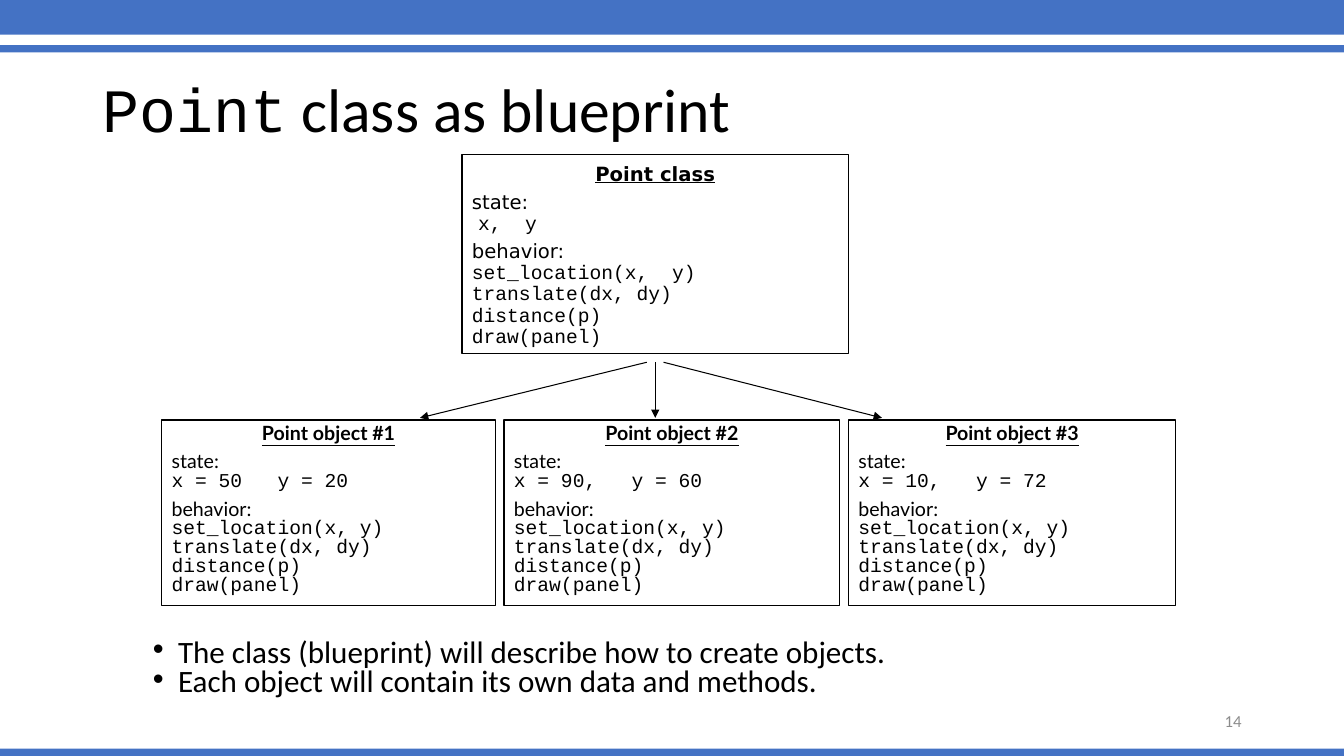
from lxml import etree
from pptx import Presentation
from pptx.dml.color import RGBColor
from pptx.enum.shapes import MSO_CONNECTOR, MSO_SHAPE
from pptx.enum.text import MSO_ANCHOR, MSO_AUTO_SIZE, PP_ALIGN
from pptx.oxml.ns import qn
from pptx.util import Pt

PX = 9525  # EMU per px, 96 px to the inch
BLACK = RGBColor(0x00, 0x00, 0x00)
WHITE = RGBColor(0xFF, 0xFF, 0xFF)
BLUE = RGBColor(0x44, 0x72, 0xC4)
GRAY = RGBColor(0x8C, 0x8C, 0x8C)
BODY_FONT, CODE_FONT = "Calibri", "Courier New"
RECTANGLE = MSO_SHAPE.RECTANGLE
STRAIGHT = MSO_CONNECTOR.STRAIGHT
LEFT, CENTER, RIGHT = PP_ALIGN.LEFT, PP_ALIGN.CENTER, PP_ALIGN.RIGHT
TOP, MIDDLE = MSO_ANCHOR.TOP, MSO_ANCHOR.MIDDLE
NO_AUTOFIT = MSO_AUTO_SIZE.NONE


def add_text(paragraph, text, size, name, color=BLACK, **styles):
    """Add text in one format, with a line break at each newline."""
    for index, line in enumerate(text.split("\n")):
        if index:
            paragraph.add_line_break()
        if line:
            run = paragraph.add_run()
            run.text = line
            run.font.color.rgb = color
            formats = {"size": Pt(size), "name": name, **styles}
            for attribute, value in formats.items():
                setattr(run.font, attribute, value)


def set_frame(shape, left, top, width, height, anchor):
    """Place a shape and return its wrapped, fixed-size text frame."""
    places = {"left": left, "top": top, "width": width, "height": height}
    for attribute, value in places.items():
        setattr(shape, attribute, value * PX)
    frame = shape.text_frame
    formats = {"word_wrap": True, "auto_size": NO_AUTOFIT, "vertical_anchor": anchor}
    for attribute, value in formats.items():
        setattr(frame, attribute, value)
    return frame


presentation = Presentation()
presentation.slide_width = 1280 * PX
presentation.slide_height = 720 * PX
slide = presentation.slides.add_slide(presentation.slide_layouts[1])
shapes = slide.shapes

# Blue bars across the slide
for top, height in [(0, 33), (43, 7), (713, 7)]:
    bar = shapes.add_shape(RECTANGLE, 0, top * PX, 1280 * PX, height * PX)
    bar.shadow.inherit = False
    bar.fill.solid()
    bar.fill.fore_color.rgb = BLUE
    bar.line.fill.background()

# Title
title = set_frame(shapes.title, 88, 38, 1104, 139, MIDDLE).paragraphs[0]
title.alignment = LEFT
title.line_spacing = 0.9
add_text(title, "Point", 44, CODE_FONT)
add_text(title, " class as blueprint", 44, BODY_FONT)

# Bulleted list
bullets = [
    "The class (blueprint) will describe how to create objects.",
    "Each object will contain its own data and methods.",
]
body = set_frame(slide.placeholders[1], 88, 610, 1104, 60, TOP)
for index, bullet in enumerate(bullets):
    paragraph = body.add_paragraph() if index else body.paragraphs[0]
    paragraph.line_spacing = 0.6
    paragraph.space_before = Pt(5 if index else 0)
    properties = paragraph._p.get_or_add_pPr()
    properties.set("marL", str(72 * PX))
    properties.set("indent", str(-24 * PX))
    add_text(paragraph, bullet, 22.2, BODY_FONT)

# Class box and its three object boxes
METHODS = "translate(dx, dy)\ndistance(p)\ndraw(panel)"
CLASS_STYLE = {"font": "DejaVu Sans", "heading": 1.1, "lines": 0.9, "gap": 5}
OBJECT_STYLE = {"font": "Lato", "heading": 0.8, "lines": 0.8, "gap": 7}
boxes = [
    ("Point class", (440, 147, 368, 190), " ", "x,  y", "x,  y", CLASS_STYLE),
    ("Point object #1", (154, 400, 318, 177), "", "x = 50   y = 20", "x, y", OBJECT_STYLE),
    ("Point object #2", (480, 400, 320, 177), "", "x = 90,   y = 60", "x, y", OBJECT_STYLE),
    ("Point object #3", (808, 400, 312, 177), "", "x = 10,   y = 72", "x, y", OBJECT_STYLE),
]
for name, place, lead, state, arguments, style in boxes:
    box = shapes.add_shape(RECTANGLE, 0, 0, PX, PX)
    box.shadow.inherit = False
    box.fill.solid()
    box.fill.fore_color.rgb = WHITE
    box.line.color.rgb = BLACK
    box.line.width = Pt(0.75)
    frame = set_frame(box, *place, TOP)

    heading = frame.paragraphs[0]
    heading.alignment = CENTER
    heading.line_spacing = style["heading"]
    add_text(heading, name, 14, style["font"], bold=True, underline=True)

    sections = [
        ("state:\n" + lead, state),
        ("behavior:\n", f"set_location({arguments})\n{METHODS}"),
    ]
    for label, code in sections:
        paragraph = frame.add_paragraph()
        paragraph.alignment = LEFT
        paragraph.line_spacing = style["lines"]
        paragraph.space_before = Pt(style["gap"])
        add_text(paragraph, label, 14, style["font"])
        add_text(paragraph, code, 14, CODE_FONT)

# Arrows from the class to its objects
for start, end in [(616, 400), (624, 624), (632, 840)]:
    arrow = shapes.add_connector(STRAIGHT, start * PX, 345 * PX, end * PX, 398 * PX)
    arrow.line.color.rgb = BLACK
    arrow.line.width = Pt(0.75)
    etree.SubElement(arrow.line._get_or_add_ln(), qn("a:tailEnd"), type="triangle")
    etree.SubElement(arrow._element.spPr, qn("a:effectLst"))

# Slide number
number_box = shapes.add_textbox(0, 0, PX, PX)
number = set_frame(number_box, 904, 667, 288, 38, MIDDLE).paragraphs[0]
number.alignment = RIGHT
add_text(number, "14", 12, BODY_FONT, GRAY)

presentation.save("out.pptx")
